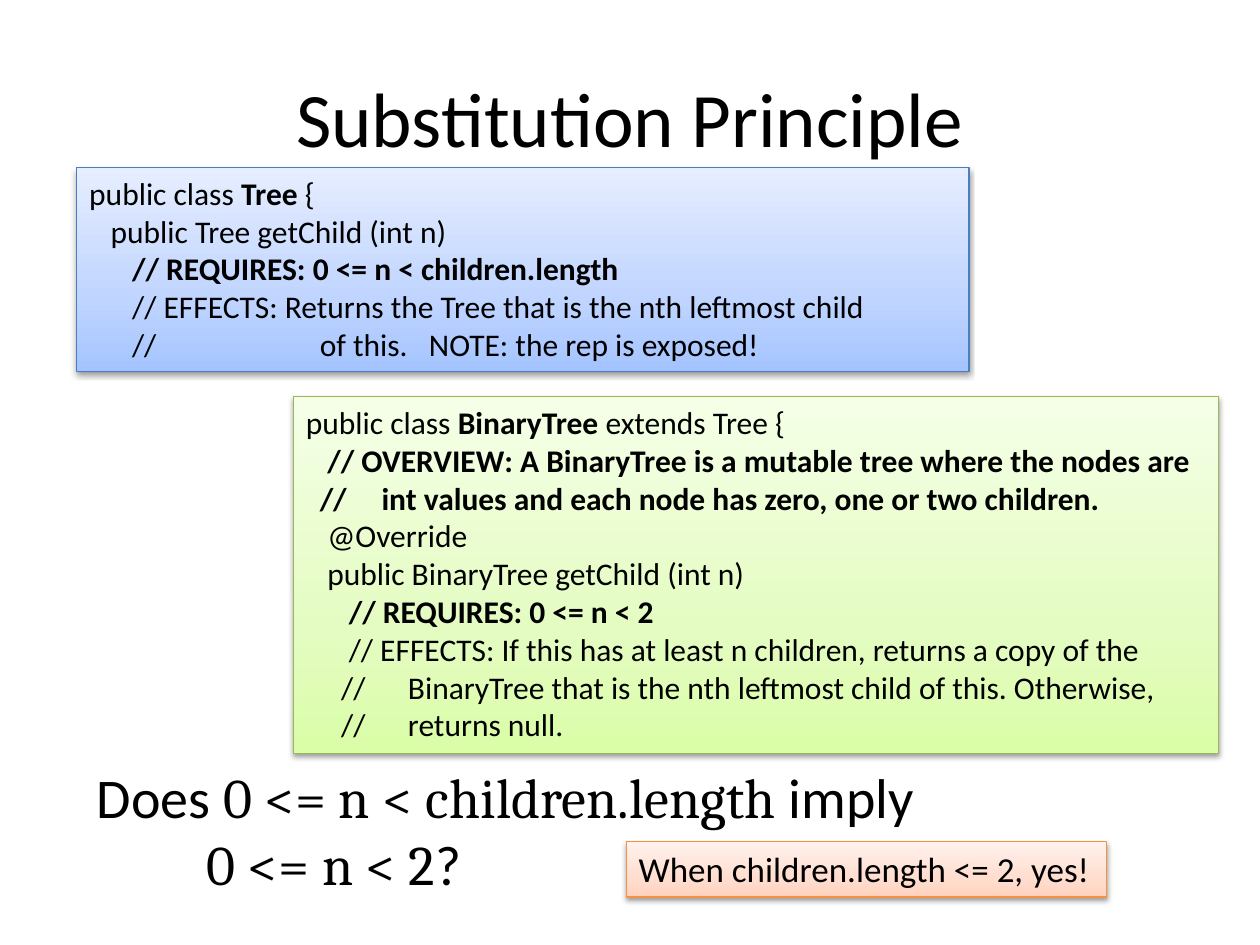
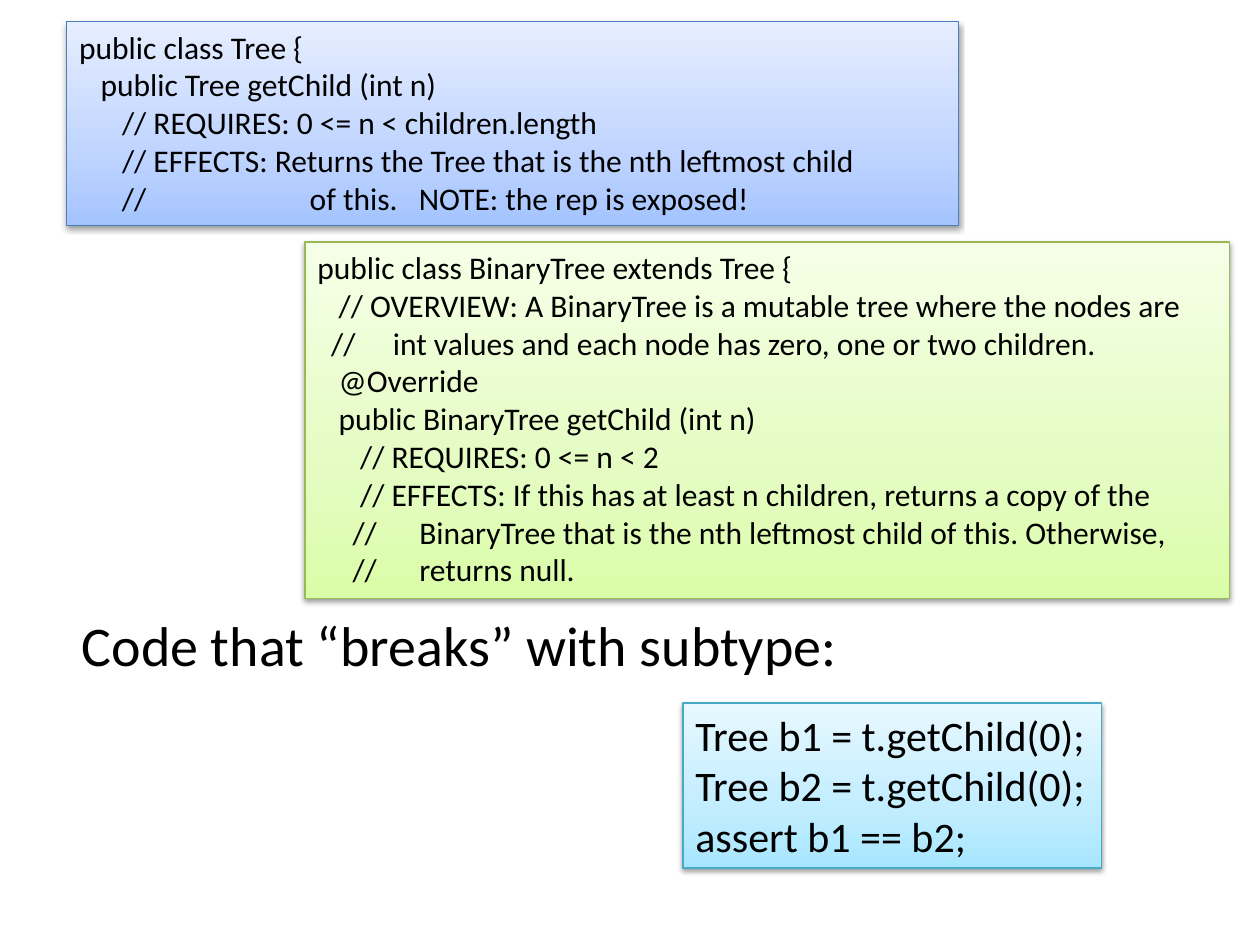
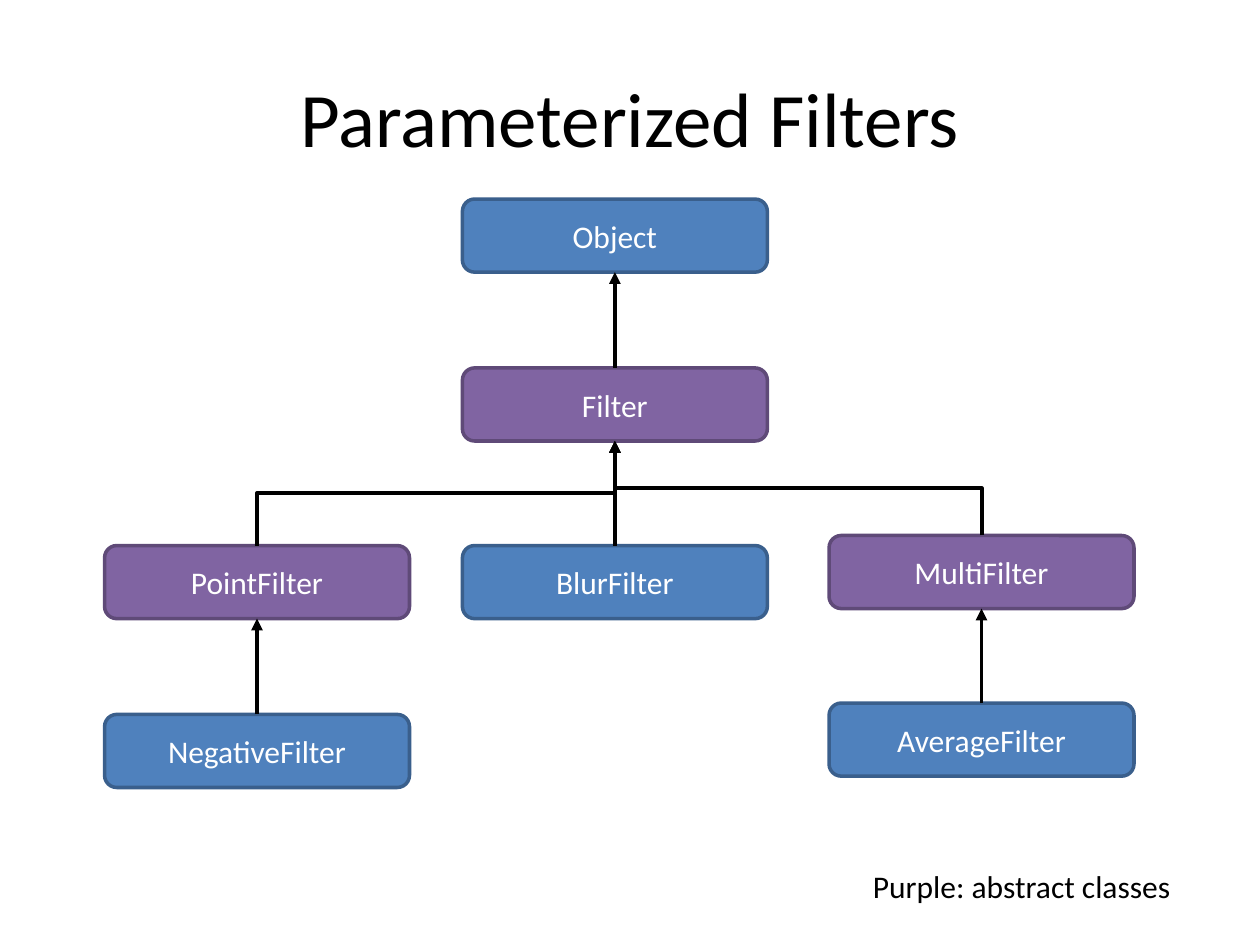
import copy

import pptx
import pptx.dml.color
import pptx.enum.shapes
import pptx.enum.text
import pptx.oxml
import pptx.oxml.ns
import pptx.util

Inches = pptx.util.Inches
Pt = pptx.util.Pt
qn = pptx.oxml.ns.qn
SHAPE = pptx.enum.shapes.MSO_SHAPE
CONNECTOR = pptx.enum.shapes.MSO_CONNECTOR
ALIGN = pptx.enum.text.PP_ALIGN
ANCHOR = pptx.enum.text.MSO_ANCHOR
FIT = pptx.enum.text.MSO_AUTO_SIZE
NS = 'xmlns:a="http://schemas.openxmlformats.org/drawingml/2006/main"'

# Panel palettes: border, then gradient from bottom to top
BLUE = ("4B7EBC", "A4C4FF", "BFD4FF", "E6EEFF")
GREEN = ("98B955", "DAFDA7", "E4FCC2", "F5FFE7")
ORANGE = ("F69240", "FFD2BD", "FFDED0", "FFF2ED")
AQUA = ("46AAC5", "A7E6FF", "C1EDFF", "E7F8FF")
GRADIENT_STOPS = (0, 0.35, 1)

# Class box palettes: fill, border
CONCRETE = ("4F81BD", "3A5F8C")
ABSTRACT = ("8064A2", "5F4A78")

BOLD = {"bold": True}
CAMBRIA = {"name": "Cambria"}

# Code lines: first-line indent, indent of text after a tab, text (*emphasis*)
TREE_CODE = [
    (0, 0, "public class *Tree* {"),
    (0.17, 0, "public Tree getChild (int n)"),
    (0.34, 0, "*// REQUIRES: 0 <= n < children.length*"),
    (0.34, 0, "// EFFECTS: Returns the Tree that is the nth leftmost child"),
    (0.34, 1.83, "//\tof this.   NOTE: the rep is exposed!"),
]
BINARY_TREE_CODE = [
    (0, 0, "public class *BinaryTree* extends Tree {"),
    (0.17, 0, "*// OVERVIEW: A BinaryTree is a mutable tree where the nodes are*"),
    (0.11, 0.6, "*//\tint values and each node has zero, one or two children.*"),
    (0.17, 0, "@Override"),
    (0.17, 0, "public BinaryTree getChild (int n)"),
    (0.34, 0, "*// REQUIRES: 0 <= n < 2*"),
    (0.34, 0, "// EFFECTS: If this has at least n children, returns a copy of the"),
    (0.28, 0.81, "//\tBinaryTree that is the nth leftmost child of this. Otherwise,"),
    (0.28, 0.81, "//\treturns null."),
]


def rgb(value):
    return pptx.dml.color.RGBColor.from_string(value)


def apply(target, values):
    for name, value in values.items():
        setattr(target, name, value)


class Deck:
    """Holds the shared style and the current slide."""

    font = "Calibri"
    ink = "000000"

    def __init__(self):
        self.prs = pptx.Presentation()
        apply(self.prs, {"slide_width": Inches(10), "slide_height": Inches(7.5)})

    def slide(self, title=None):
        self.s = self.prs.slides.add_slide(self.prs.slide_layouts[6])
        if title:
            self.text(0.5, 0.3, 9, 1.25, [title], 44, align=ALIGN.CENTER,
                      anchor=ANCHOR.MIDDLE, fit=FIT.NONE)

    def fill_text(self, sp, lines, size, color=ink, align=ALIGN.LEFT,
                  anchor=ANCHOR.TOP, fit=FIT.SHAPE_TO_FIT_TEXT, wrap=True, emphasis=None):
        tf = sp.text_frame
        apply(tf, {"word_wrap": wrap, "auto_size": fit, "vertical_anchor": anchor})
        for i, line in enumerate(lines):
            first, hang, text = (0, 0, line) if isinstance(line, str) else line
            p = tf.add_paragraph() if i else tf.paragraphs[0]
            p.alignment = align
            if first or hang:
                left = hang or first
                pPr = p._p.get_or_add_pPr()
                pPr.set("marL", str(Inches(left)))
                pPr.set("indent", str(Inches(first) - Inches(left)))
            for j, part in enumerate(text.split("*")):
                if part:
                    r = p.add_run()
                    r.text = part
                    apply(r.font, {"name": self.font, "size": Pt(size)})
                    r.font.color.rgb = rgb(color)
                    if j % 2:
                        apply(r.font, emphasis or {})

    def text(self, x, y, w, h, lines, size, **style):
        sp = self.s.shapes.add_textbox(Inches(x), Inches(y), Inches(w), Inches(h))
        self.fill_text(sp, lines, size, **style)

    def shape(self, kind, x, y, w, h, border, weight):
        sp = self.s.shapes.add_shape(kind, Inches(x), Inches(y), Inches(w), Inches(h))
        sp.shadow.inherit = False
        sp.line.color.rgb = rgb(border)
        sp.line.width = Pt(weight)
        return sp

    def panel(self, x, y, w, h, palette, lines, size=18, **style):
        border, *colors = palette
        sp = self.shape(SHAPE.RECTANGLE, x, y, w, h, border, 0.75)
        # Three-stop vertical gradient
        sp.fill.gradient()
        sp.fill.gradient_angle = 90
        spPr = sp._element.spPr
        stops = spPr.find(".//" + qn("a:gsLst"))
        stops.append(copy.deepcopy(stops[0]))
        for stop, position, color in zip(sp.fill.gradient_stops, GRADIENT_STOPS, colors):
            stop.position = position
            stop.color.rgb = rgb(color)
        # Soft shadow below
        spPr.find(qn("a:effectLst")).append(pptx.oxml.parse_xml(
            f'<a:outerShdw {NS} blurRad="{Pt(3.1)}" dist="{Pt(1.6)}" dir="5400000" '
            'rotWithShape="0"><a:srgbClr val="000000"><a:alpha val="38000"/>'
            '</a:srgbClr></a:outerShdw>'))
        self.fill_text(sp, lines, size, **style)

    def class_box(self, x, y, name, palette):
        fill, border = palette
        sp = self.shape(SHAPE.ROUNDED_RECTANGLE, x, y, 2.42, 0.58, border, 2)
        sp.fill.solid()
        sp.fill.fore_color.rgb = rgb(fill)
        self.fill_text(sp, [name], 18, color="FFFFFF", align=ALIGN.CENTER,
                       anchor=ANCHOR.MIDDLE, fit=FIT.NONE)
        return sp

    def inherit_arrow(self, child, parent):
        straight = child.left == parent.left
        kind = CONNECTOR.STRAIGHT if straight else CONNECTOR.ELBOW
        c = self.s.shapes.add_connector(kind, 0, 0, 0, 0)
        c.begin_connect(child, 0)
        c.end_connect(parent, 2)
        c.line.color.rgb = rgb(self.ink)
        c.line.width = Pt(2.25)
        spPr = c._element.spPr
        if not straight:
            # Turn the elbow so that it leaves the child upwards
            x1, y1, x2, y2 = c.begin_x, c.begin_y, c.end_x, c.end_y
            w, h = y1 - y2, abs(x2 - x1)
            apply(c, {"left": (x1 + x2 - w) // 2, "top": (y1 + y2 - h) // 2,
                      "width": w, "height": h})
            xfrm = spPr.find(qn("a:xfrm"))
            for name, value in {"rot": "16200000", "flipH": "0",
                                "flipV": str(int(x2 < x1))}.items():
                xfrm.set(name, value)
        spPr.find(qn("a:ln")).append(
            pptx.oxml.parse_xml(f'<a:tailEnd {NS} type="triangle"/>'))
        spPr.append(pptx.oxml.parse_xml(f"<a:effectLst {NS}/>"))

    def tree_panels(self, tree_at, binary_at, emphasis=None):
        self.panel(*tree_at, 7.08, 1.62, BLUE, TREE_CODE, emphasis=emphasis)
        self.panel(*binary_at, 7.34, 2.83, GREEN, BINARY_TREE_CODE, emphasis=emphasis)


def main():
    deck = Deck()

    # Slide 1: does the precondition hold?
    deck.slide("Substitution Principle")
    deck.tree_panels((0.61, 1.33), (2.33, 3.15), BOLD)
    deck.text(0.67, 6, 7.06, 1.18,
              ["Does *0 <= n < children.length* imply", (0.87, 0, "*0 <= n < 2*?")],
              32, wrap=False, emphasis=CAMBRIA)
    deck.panel(4.97, 6.68, 3.81, 0.44, ORANGE, ["When children.length <= 2, yes!"],
               20, wrap=False)

    # Slide 2: code that breaks
    deck.slide()
    deck.tree_panels((0.53, 0.17), (2.42, 1.92))
    deck.text(0.55, 4.8, 6.36, 0.64, ["Code that “breaks” with subtype:"], 32, wrap=False)
    deck.panel(5.42, 5.58, 3.32, 1.31, AQUA,
               ["Tree b1 = t.getChild(0);", "Tree b2 = t.getChild(0);", "assert b1 == b2;"],
               24, wrap=False)

    # Slide 3: class hierarchy, each row: name, parent, left, top, palette
    deck.slide("Parameterized Filters")
    left, middle, right = 0.83, 3.67, 6.58
    hierarchy = [
        ("Object", None, middle, 1.58, CONCRETE),
        ("Filter", "Object", middle, 2.92, ABSTRACT),
        ("PointFilter", "Filter", left, 4.33, ABSTRACT),
        ("NegativeFilter", "PointFilter", left, 5.67, CONCRETE),
        ("BlurFilter", "Filter", middle, 4.33, CONCRETE),
        ("MultiFilter", "Filter", right, 4.25, ABSTRACT),
        ("AverageFilter", "MultiFilter", right, 5.58, CONCRETE),
    ]
    boxes = {name: deck.class_box(x, y, name, palette)
             for name, _, x, y, palette in hierarchy}
    for name, parent, *_ in hierarchy:
        if parent:
            deck.inherit_arrow(boxes[name], boxes[parent])
    deck.text(6.83, 6.83, 2.58, 0.4, ["Purple: abstract classes"], 18)

    deck.prs.save("out.pptx")


if __name__ == "__main__":
    main()
